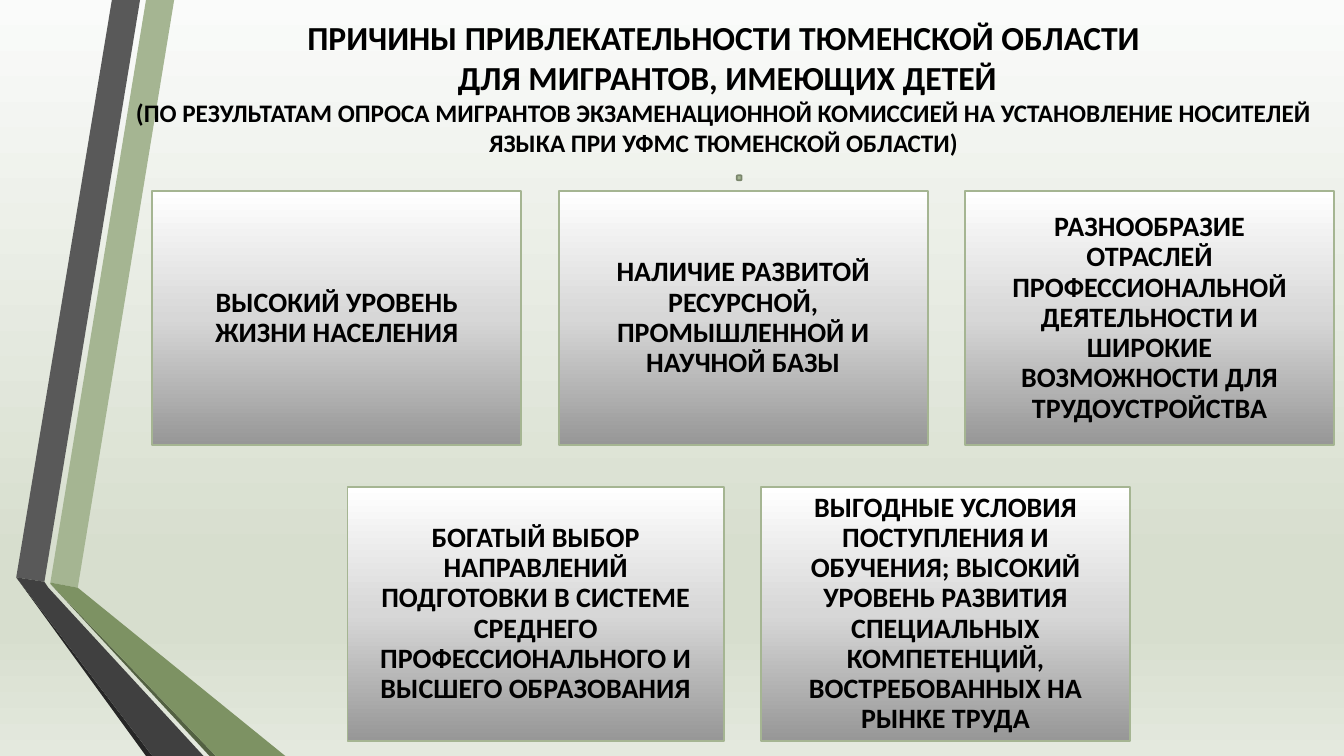
import lxml.etree
import pptx
import pptx.util
import pptx.dml.color
import pptx.enum.shapes
import pptx.enum.text
import pptx.oxml.ns

Cm, Pt = pptx.util.Cm, pptx.util.Pt
WIDE, HIGH = 33.87, 19.05
FONT = "Calibri"
GREEN = "A5B592"

HEAD = "ПРИЧИНЫ ПРИВЛЕКАТЕЛЬНОСТИ ТЮМЕНСКОЙ ОБЛАСТИ\v ДЛЯ МИГРАНТОВ, ИМЕЮЩИХ ДЕТЕЙ\v"
NOTE = ("(ПО РЕЗУЛЬТАТАМ ОПРОСА МИГРАНТОВ ЭКЗАМЕНАЦИОННОЙ КОМИССИЕЙ "
        "НА УСТАНОВЛЕНИЕ НОСИТЕЛЕЙ ЯЗЫКА ПРИ УФМС ТЮМЕНСКОЙ ОБЛАСТИ)")

# Each row: left, top, then (width, text) of its cards
GAP, TALL = 0.94, 6.4
ROWS = [
    (3.84, 4.82, [
        (9.3, "ВЫСОКИЙ УРОВЕНЬ ЖИЗНИ НАСЕЛЕНИЯ"),
        (9.3, "НАЛИЧИЕ РАЗВИТОЙ РЕСУРСНОЙ, ПРОМЫШЛЕННОЙ И НАУЧНОЙ БАЗЫ"),
        (9.3, "РАЗНООБРАЗИЕ ОТРАСЛЕЙ ПРОФЕССИОНАЛЬНОЙ ДЕЯТЕЛЬНОСТИ "
              "И ШИРОКИЕ ВОЗМОЖНОСТИ ДЛЯ ТРУДОУСТРОЙСТВА"),
    ]),
    (8.76, 12.27, [
        (9.48, "БОГАТЫЙ ВЫБОР НАПРАВЛЕНИЙ ПОДГОТОВКИ В СИСТЕМЕ "
               "СРЕДНЕГО ПРОФЕССИОНАЛЬНОГО И ВЫСШЕГО ОБРАЗОВАНИЯ"),
        (9.3, "ВЫГОДНЫЕ УСЛОВИЯ ПОСТУПЛЕНИЯ И ОБУЧЕНИЯ; ВЫСОКИЙ УРОВЕНЬ "
              "РАЗВИТИЯ СПЕЦИАЛЬНЫХ КОМПЕТЕНЦИЙ, ВОСТРЕБОВАННЫХ НА РЫНКЕ ТРУДА"),
    ]),
]

# Gradient stops from top to bottom
SKY = [(0, "FAFBFA"), (74, "D7DECE"), (83, "D7DECE"), (100, "E4E9DE")]
STEEL = [(0, "FFFFFF"), (50, "D7D7D7"), (100, "979797")]

RIBBONS = [
    (GREEN, [(1.27, 14.68), (1.96, 14.81), (4.39, 0), (3.68, 0)]),
    ("595959", [(3.53, 0), (2.82, 0), (0.41, 14.55), (1.12, 14.66)]),
    ("262626", [(0.41, 14.55), (3.68, HIGH), (3.84, HIGH)]),
    ("536142", [(1.27, 14.71), (5.28, HIGH), (5.44, HIGH)]),
    ("7D9263", [(1.27, 14.71), (5.44, HIGH), (7.19, HIGH), (1.96, 14.81), (1.27, 14.68)]),
    ("404040", [(5.13, HIGH), (1.22, 14.81), (1.12, 14.66), (0.41, 14.55), (3.84, HIGH)]),
]


def tint(code):
    return pptx.dml.color.RGBColor.from_string(code)


def blend(fill, root, stops):
    """Give fill, found inside the element root, a downward gradient."""
    fill.gradient()
    fill.gradient_angle = 270
    qn = pptx.oxml.ns.qn
    part = root.find(".//" + qn("a:gsLst"))
    for old in list(part):
        part.remove(old)
    for place, code in stops:
        stop = lxml.etree.SubElement(part, qn("a:gs"), pos=str(place * 1000))
        lxml.etree.SubElement(stop, qn("a:srgbClr"), val=code)


def style(para, size):
    para.alignment = pptx.enum.text.PP_ALIGN.CENTER
    font = para.font
    font.name, font.size, font.bold = FONT, Pt(size), True
    font.color.rgb = tint("000000")


def edge(shape, code):
    shape.shadow.inherit = False
    shape.line.color.rgb = tint(code)
    shape.line.width = Pt(1.25)


def ribbon(slide, code, dots):
    dots = [(Cm(x), Cm(y)) for x, y in dots]
    pen = slide.shapes.build_freeform(*dots[0])
    pen.add_line_segments(dots[1:], close=True)
    shape = pen.convert_to_shape()
    shape.shadow.inherit = False
    shape.fill.solid()
    shape.fill.fore_color.rgb = tint(code)
    shape.line.fill.background()


def title(slide):
    shape = slide.shapes.title
    shape.element.getparent().append(shape.element)  # in front of the ribbons
    shape.left, shape.top = Cm(2.87), Cm(0.25)
    shape.width, shape.height = Cm(30.73), Cm(3.89)
    frame = shape.text_frame
    frame.auto_size = pptx.enum.text.MSO_AUTO_SIZE.NONE
    frame.vertical_anchor = pptx.enum.text.MSO_ANCHOR.MIDDLE
    frame.text = HEAD
    para = frame.paragraphs[0]
    style(para, 24)
    run = para.add_run()
    run.text = NOTE
    run.font.size = Pt(18)


def card(slide, left, top, width, text):
    kind = pptx.enum.shapes.MSO_SHAPE.RECTANGLE
    shape = slide.shapes.add_shape(kind, Cm(left), Cm(top), Cm(width), Cm(TALL))
    blend(shape.fill, shape.element, STEEL)
    edge(shape, GREEN)
    frame = shape.text_frame
    frame.word_wrap = True
    frame.vertical_anchor = pptx.enum.text.MSO_ANCHOR.MIDDLE
    frame.margin_left = frame.margin_right = Cm(0.69)
    frame.margin_top = frame.margin_bottom = Cm(0.69)
    frame.text = text
    para = frame.paragraphs[0]
    style(para, 20)
    para.line_spacing = 0.9


def main():
    deck = pptx.Presentation()
    deck.slide_width, deck.slide_height = Cm(WIDE), Cm(HIGH)
    slide = deck.slides.add_slide(deck.slide_layouts[5])
    blend(slide.background.fill, slide.element, SKY)
    for code, dots in RIBBONS:
        ribbon(slide, code, dots)
    title(slide)
    for left, top, cards in ROWS:
        for width, text in cards:
            card(slide, left, top, width, text)
            left += width + GAP
    kind = pptx.enum.shapes.MSO_SHAPE.FLOWCHART_ALTERNATE_PROCESS
    dot = slide.shapes.add_shape(kind, Cm(18.57), Cm(4.42), Cm(0.12), Cm(0.12))
    dot.fill.solid()
    dot.fill.fore_color.rgb = tint(GREEN)
    edge(dot, "7A866C")
    deck.save("out.pptx")


if __name__ == "__main__":
    main()
